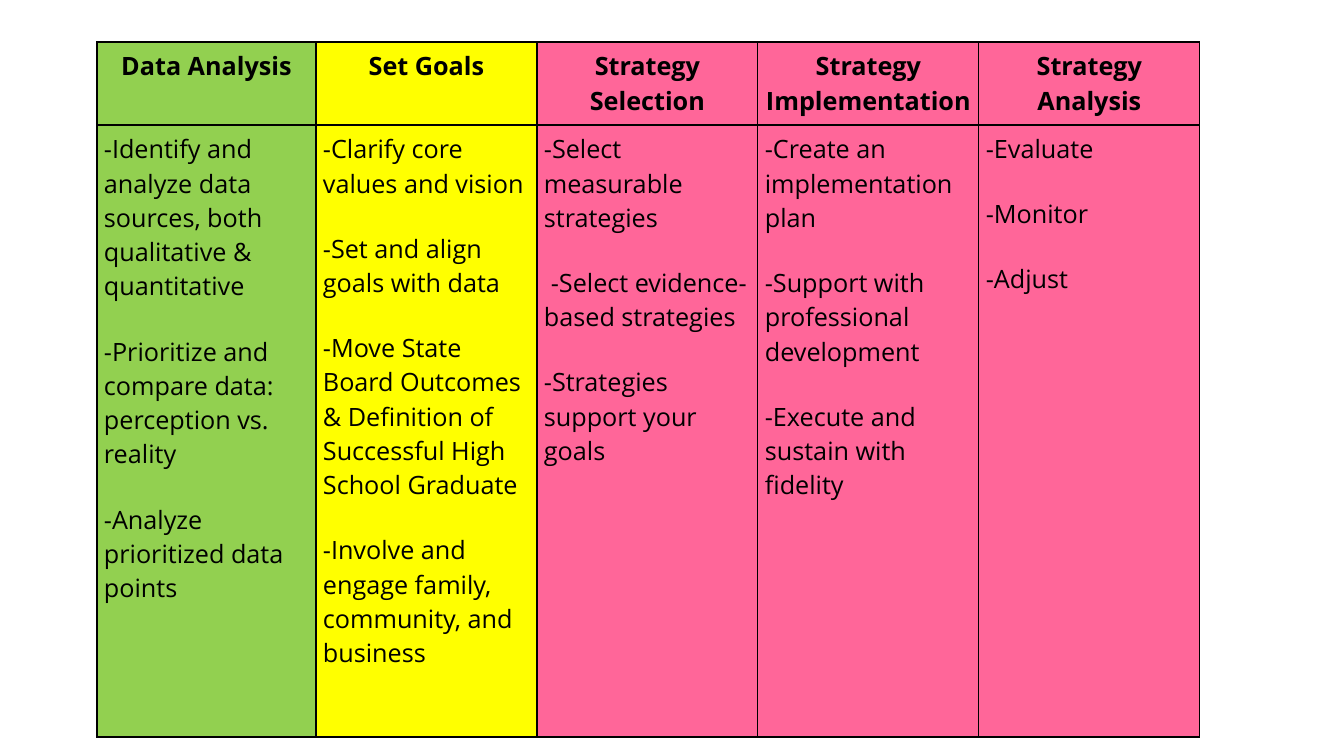
from lxml import etree
from pptx import Presentation
from pptx.dml.color import RGBColor
from pptx.enum.text import PP_ALIGN
from pptx.oxml.ns import qn
from pptx.util import Pt

LEFT, CENTER = PP_ALIGN.LEFT, PP_ALIGN.CENTER
EMU_PER_PX = 914400 / 100.8
COLORS = {"data": "92D050", "goals": "FFFF00", "strategy": "FF6699", "ink": "000000"}
STEPS = [
    ("Data Analysis", "data", [
        "-Identify and analyze data sources, both qualitative & quantitative",
        "-Prioritize and compare data: perception vs. reality",
        "-Analyze prioritized data points",
    ]),
    ("Set Goals", "goals", [
        "-Clarify core values and vision",
        "-Set and align goals with data",
        "-Move State Board Outcomes & Definition of Successful High School Graduate",
        "-Involve and engage family, community, and business",
    ]),
    ("Strategy Selection", "strategy", [
        "-Select measurable strategies",
        "-Select evidence-based strategies",
        "-Strategies support your goals",
    ]),
    ("Strategy Implementation", "strategy", [
        "-Create an implementation plan",
        "-Support with professional development",
        "-Execute and sustain with fidelity",
    ]),
    ("Strategy Analysis", "strategy", ["-Evaluate", "-Monitor", "-Adjust"]),
]
FIRST_LINE_INDENTS = {"-Select evidence-based strategies": 7}


def px(length):
    return round(length * EMU_PER_PX)


class SlideBuilder:
    """Holds the text style and the current slide."""

    font_format = {"name": "Open Sans", "size": Pt(18)}
    margins = {f"margin_{side}": px(7) for side in ("left", "right", "top", "bottom")}
    item_gap = Pt(22)
    border_width = Pt(1)

    def __init__(self, presentation):
        self.slide = presentation.slides.add_slide(presentation.slide_layouts[6])

    def table(self, left, top, widths, heights):
        frame = self.slide.shapes.add_table(
            len(heights), len(widths), px(left), px(top), px(sum(widths)), px(sum(heights)))
        grid = frame.table
        grid.first_row = grid.horz_banding = False
        for column, width in zip(grid.columns, widths):
            column.width = px(width)
        for row, height in zip(grid.rows, heights):
            row.height = px(height)
        return grid

    def cell(self, cell, items, color, bold=False, align=LEFT):
        for name, value in self.margins.items():
            setattr(cell, name, value)
        self.borders(cell)
        cell.fill.solid()
        cell.fill.fore_color.rgb = RGBColor.from_string(COLORS[color])
        frame = cell.text_frame
        for index, item in enumerate(items):
            paragraph = frame.add_paragraph() if index else frame.paragraphs[0]
            if index:
                paragraph.space_before = self.item_gap
            paragraph.alignment = align
            if item in FIRST_LINE_INDENTS:
                properties = paragraph._p.get_or_add_pPr()
                properties.set("indent", str(px(FIRST_LINE_INDENTS[item])))
            run = paragraph.add_run()
            run.text = item
            for name, value in {**self.font_format, "bold": bold}.items():
                setattr(run.font, name, value)
            run.font.color.rgb = RGBColor.from_string(COLORS["ink"])

    def borders(self, cell):
        properties = cell._tc.get_or_add_tcPr()
        for side in ("lnL", "lnR", "lnT", "lnB"):
            line = etree.SubElement(properties, qn(f"a:{side}"), w=str(self.border_width))
            fill = etree.SubElement(line, qn("a:solidFill"))
            etree.SubElement(fill, qn("a:srgbClr"), val=COLORS["ink"])


def main():
    presentation = Presentation()
    presentation.slide_width, presentation.slide_height = px(1344), px(756)
    builder = SlideBuilder(presentation)
    process = builder.table(97, 42, [219] + [221] * 4, [83, 612])
    for column, (heading, color, actions) in enumerate(STEPS):
        builder.cell(process.cell(0, column), [heading], color, bold=True, align=CENTER)
        builder.cell(process.cell(1, column), actions, color)
    presentation.save("out.pptx")


if __name__ == "__main__":
    main()
